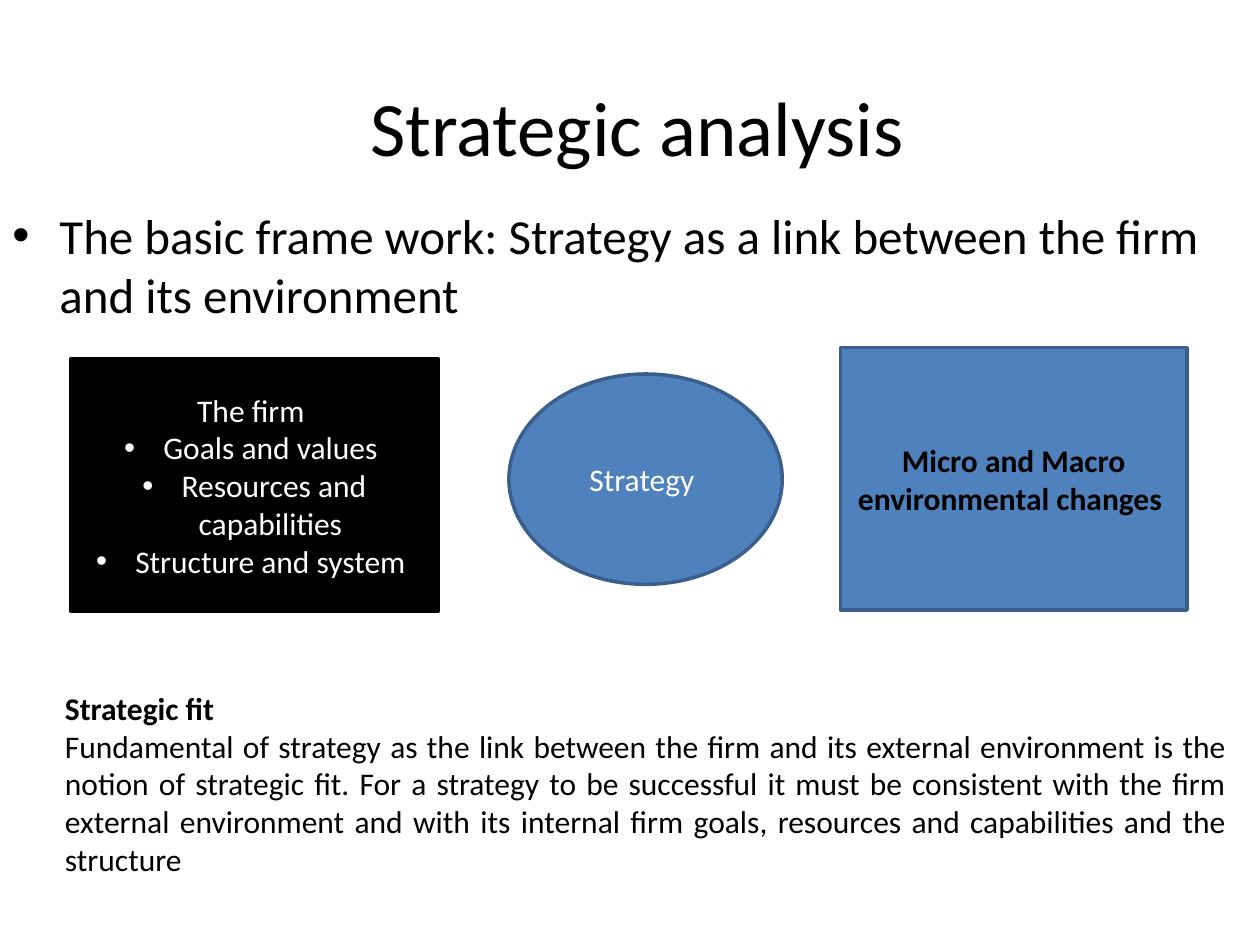
"""Build the strategic analysis slide."""
from lxml.etree import SubElement
from pptx import Presentation
from pptx.dml.color import RGBColor
from pptx.enum.shapes import MSO_SHAPE as Shape
from pptx.enum.text import MSO_ANCHOR as Anchor, PP_ALIGN as Align
from pptx.oxml.ns import qn
from pptx.util import Cm, Pt


def color(value):
    """Turn a hex string into a colour."""
    return RGBColor.from_string(value)


def write(box, lines, size, ink, align, anchor, bold=False, bullet_from=None, indent=0):
    """Fill a box with formatted paragraphs, bulleted from the given line on."""
    frame = box.text_frame
    frame.word_wrap = True
    frame.vertical_anchor = anchor
    frame.text = "\n".join(lines)
    for index, para in enumerate(frame.paragraphs):
        para.alignment = align
        for span in para.runs:
            span.font.name = "Calibri"
            span.font.size = Pt(size)
            span.font.bold = bold
            span.font.color.rgb = color(ink)
        if bullet_from is not None and index >= bullet_from:
            props = para._p.get_or_add_pPr()
            props.set("marL", str(Cm(indent)))
            props.set("indent", str(-Cm(indent)))
            SubElement(props, qn("a:buFont"), typeface="Arial")
            SubElement(props, qn("a:buChar"), char="•")


deck = Presentation()
deck.slide_width, deck.slide_height = Cm(25.4), Cm(19.05)
page = deck.slides.add_slide(deck.slide_layouts[6])

title = page.shapes.add_textbox(Cm(3.81), Cm(1.06), Cm(18.42), Cm(2.96))
write(title, ["Strategic analysis "], 44, "000000", Align.CENTER, Anchor.MIDDLE)

body = page.shapes.add_textbox(Cm(0), Cm(4.02), Cm(24.56), Cm(17.54))
write(body, ["The basic frame work: Strategy as a link between the firm and its environment"],
      28, "000000", Align.LEFT, Anchor.TOP, bullet_from=0, indent=0.95)

firm = ["The firm ", "Goals and values ", "Resources and capabilities ", "Structure and system "]
environment = ["Micro and Macro environmental changes "]
framework = [
    (Shape.RECTANGLE, (1.42, 7.24, 7.42, 5.08), "000000", "000000", firm, "FFFFFF", False),
    (Shape.OVAL, (10.26, 7.54, 5.51, 4.24), "4F81BD", "3A5F8C", ["Strategy "], "FFFFFF", False),
    (Shape.RECTANGLE, (16.94, 7.01, 6.99, 5.29), "4F81BD", "3A5F8C", environment, "000000", True),
]
for kind, place, fill, outline, lines, ink, bold in framework:
    box = page.shapes.add_shape(kind, *[Cm(length) for length in place])
    box.shadow.inherit = False
    box.fill.solid()
    box.fill.fore_color.rgb = color(fill)
    box.line.color.rgb = color(outline)
    box.line.width = Pt(2)
    write(box, lines, 18, ink, Align.CENTER, Anchor.MIDDLE, bold, bullet_from=1, indent=0.79)

fit = page.shapes.add_textbox(Cm(1.06), Cm(13.76), Cm(23.92), Cm(4.11))
write(fit, [
    "Strategic fit",
    "Fundamental of strategy as the link between the firm and its external environment is the "
    "notion of strategic fit. For a strategy to be successful it must be consistent with the firm "
    "external environment and with its internal firm goals, resources and capabilities and the "
    "structure",
], 18, "000000", Align.JUSTIFY, Anchor.TOP)
heading = fit.text_frame.paragraphs[0]
heading.alignment = Align.LEFT
heading.runs[0].font.bold = True

deck.save("out.pptx")
